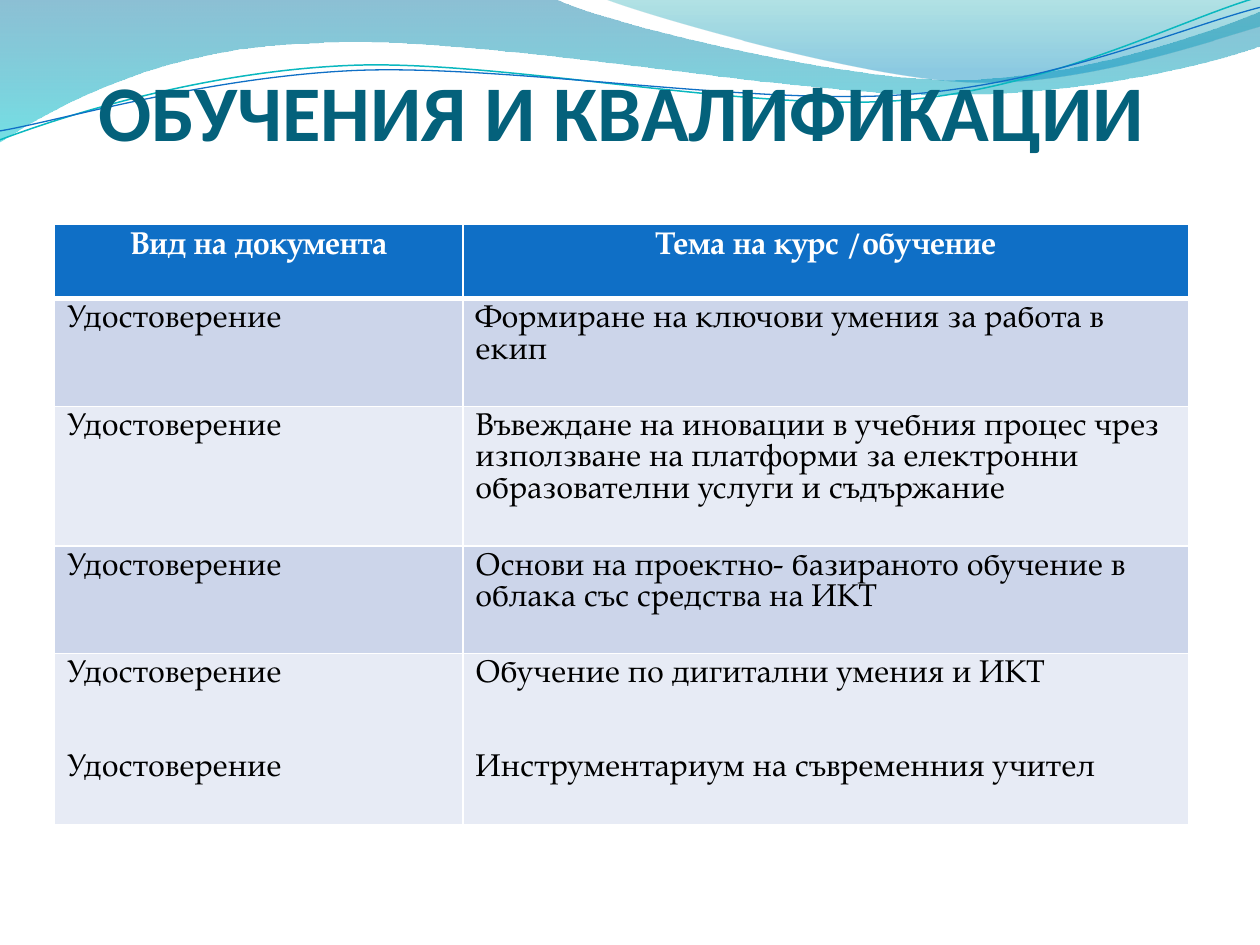
import lxml.etree
import pptx
import pptx.dml.color
import pptx.enum.text
import pptx.oxml.ns
import pptx.util

Cm = pptx.util.Cm
Pt = pptx.util.Pt
RGBColor = pptx.dml.color.RGBColor
Align = pptx.enum.text.PP_ALIGN
qn = pptx.oxml.ns.qn

WHITE = RGBColor(0xFF, 0xFF, 0xFF)
BLACK = RGBColor(0, 0, 0)
BLUE = RGBColor(0x0F, 0x6F, 0xC6)
TURQUOISE = RGBColor(0x0A, 0xB8, 0xBF)
TITLE_TEAL = RGBColor(0x04, 0x61, 0x7B)
BAND_DARK = RGBColor(0xCC, 0xD5, 0xEA)
BAND_LIGHT = RGBColor(0xE7, 0xEB, 0xF5)

# Gradient stops: position, colour, opacity in percent
WIDE_GRADIENT = [(0, RGBColor(0x00, 0x74, 0xA1), 45), (1, RGBColor(0x00, 0xC6, 0xCF), 55)]
CORNER_GRADIENT = [(0, RGBColor(0x00, 0xA1, 0xA9), 30), (0.8, RGBColor(0x00, 0x8B, 0xBF), 45)]

# Outlines in cm: one point is a straight step, three points are a Bezier curve
WIDE_WAVE = [
    [(0, 0)], [(11.18, -0.03)],
    [(12.09, 0.43), (16.87, 1.6), (19.25, 1.6)],
    [(21.67, 1.6), (24.33, 0.66), (25.4, 0.23)],
    [(25.43, 0.91)],
    [(24.97, 1.12), (22.1, 1.93), (18.95, 1.91)],
    [(15.8, 1.91), (9.7, 0.71), (6.53, 0.86)],
    [(3.28, 0.91), (1.17, 2.11), (-0.03, 2.87)],
]
CORNER_WAVE = [
    [(12.17, -0.03)],
    [(12.93, 0.28), (17.32, 1.57), (19.53, 1.65)],
    [(21.74, 1.75), (24.41, 0.81), (25.4, 0.53)],
    [(25.4, 0)],
]
TURQUOISE_CURVE = [
    [(0, 2.82)],
    [(1.22, 2.36), (4.01, 1.45), (7.04, 1.32)],
    [(10.03, 1.19), (15.06, 2.26), (18.11, 2.03)],
    [(21.16, 1.8), (23.83, 0.38), (25.35, -0.05)],
]
BLUE_CURVE = [
    [(0, 2.64)],
    [(1.19, 2.44), (4.17, 1.55), (7.19, 1.42)],
    [(10.24, 1.3), (15.16, 2.13), (18.21, 1.91)],
    [(21.23, 1.7), (23.9, 0.53), (25.4, 0.15)],
]

CERTIFICATE = "Удостоверение"
ROWS = [
    (["Вид на документа"], ["Тема на курс /обучение"]),
    ([CERTIFICATE], ["Формиране на ключови умения за работа в екип"]),
    ([CERTIFICATE], ["Въвеждане на иновации в учебния процес чрез използване на "
                     "платформи за електронни образователни услуги и съдържание"]),
    ([CERTIFICATE], ["Основи на проектно- базираното обучение в облака със средства на ИКТ"]),
    ([CERTIFICATE, CERTIFICATE],
     ["Обучение по дигитални умения и ИКТ", "Инструментариум на съвременния учител"]),
]
COLUMN_WIDTHS = [8.23, 14.63]
ROW_HEIGHTS = [1.49, 2.17, 2.82, 2.16, 3.45]


class SlideWriter:
    heading_font = "Calibri"
    body_font = "TeX Gyre Pagella"
    body_size = Pt(18)

    def __init__(self, page):
        self.page = page

    def outline(self, steps, close):
        points = [(Cm(x), Cm(y)) for step in steps for x, y in step]
        builder = self.page.shapes.build_freeform(*points[0])
        builder.add_line_segments(points[1:], close=close)
        shape = builder.convert_to_shape()
        shape.shadow.inherit = False
        # Gather the three points of each curved step into one Bezier segment
        segments = iter(list(shape._element.iter(qn("a:lnTo"))))
        for step in steps[1:]:
            group = [next(segments) for _ in step]
            if len(group) == 3:
                bezier = lxml.etree.Element(qn("a:cubicBezTo"))
                group[0].addprevious(bezier)
                for segment in group:
                    bezier.append(segment[0])
                    segment.getparent().remove(segment)
        return shape

    def wave(self, steps, gradient):
        shape = self.outline(steps, True)
        shape.line.fill.background()
        shape.fill.gradient()
        shape.fill.gradient_angle = 270
        for stop, (position, color, opacity) in zip(shape.fill.gradient_stops, gradient):
            stop.position = position
            stop.color.rgb = color
            rgb = stop._gs.find(qn("a:srgbClr"))
            lxml.etree.SubElement(rgb, qn("a:alpha"), val=str(opacity * 1000))

    def curve(self, steps, color, width):
        shape = self.outline(steps, False)
        shape.fill.background()
        shape.line.color.rgb = color
        shape.line.width = Pt(width)

    def style(self, paragraph, font, size, color, bold, align):
        paragraph.font.name = font
        paragraph.font.size = size
        paragraph.font.color.rgb = color
        paragraph.font.bold = bold
        paragraph.alignment = align

    def title(self, text, left, top, width, height):
        box = self.page.shapes.add_textbox(Cm(left), Cm(top), Cm(width), Cm(height))
        frame = box.text_frame
        frame.word_wrap = True
        frame.vertical_anchor = pptx.enum.text.MSO_ANCHOR.BOTTOM
        frame.margin_left = frame.margin_right = frame.margin_bottom = 0
        frame.text = text
        self.style(frame.paragraphs[0], self.heading_font, Pt(45), TITLE_TEAL, True, Align.CENTER)

    def borders(self, cell, bottom):
        properties = cell._tc.get_or_add_tcPr()
        for side, width in (("L", 1), ("R", 1), ("T", 1), ("B", bottom)):
            line = lxml.etree.SubElement(properties, qn("a:ln" + side), w=str(Pt(width)))
            fill = lxml.etree.SubElement(line, qn("a:solidFill"))
            lxml.etree.SubElement(fill, qn("a:srgbClr"), val=str(WHITE))

    def cell(self, cell, lines, fill, header):
        self.borders(cell, 3 if header else 1)
        cell.fill.solid()
        cell.fill.fore_color.rgb = fill
        cell.text_frame.text = "\n".join(lines)
        for number, paragraph in enumerate(cell.text_frame.paragraphs):
            self.style(paragraph, self.body_font, self.body_size, WHITE if header else BLACK,
                       header, Align.CENTER if header else Align.LEFT)
            paragraph.line_spacing = self.body_size
            paragraph.space_before = 2 * self.body_size if number else 0

    def table(self, rows, left, top, widths, heights):
        table = self.page.shapes.add_table(len(rows), len(widths), Cm(left), Cm(top),
                                           Cm(sum(widths)), Cm(sum(heights))).table
        for column, width in zip(table.columns, widths):
            column.width = Cm(width)
        for number, (row, height, texts) in enumerate(zip(table.rows, heights, rows)):
            row.height = Cm(height)
            band = BAND_DARK if number % 2 else BAND_LIGHT
            for cell, lines in zip(row.cells, texts):
                self.cell(cell, lines, band if number else BLUE, number == 0)


def main():
    deck = pptx.Presentation()
    deck.slide_width, deck.slide_height = Cm(25.4), Cm(19.05)
    writer = SlideWriter(deck.slides.add_slide(deck.slide_layouts[6]))

    # Decorative waves along the top
    writer.wave(WIDE_WAVE, WIDE_GRADIENT)
    writer.wave(CORNER_WAVE, CORNER_GRADIENT)
    writer.curve(TURQUOISE_CURVE, TURQUOISE, 0.85)
    writer.curve(BLUE_CURVE, BLUE, 0.75)

    # Title and table of courses
    writer.title("ОБУЧЕНИЯ И КВАЛИФИКАЦИИ", 1.1, 0, 22.86, 3.18)
    writer.table(ROWS, 1.1, 4.53, COLUMN_WIDTHS, ROW_HEIGHTS)

    deck.save("out.pptx")


if __name__ == "__main__":
    main()
